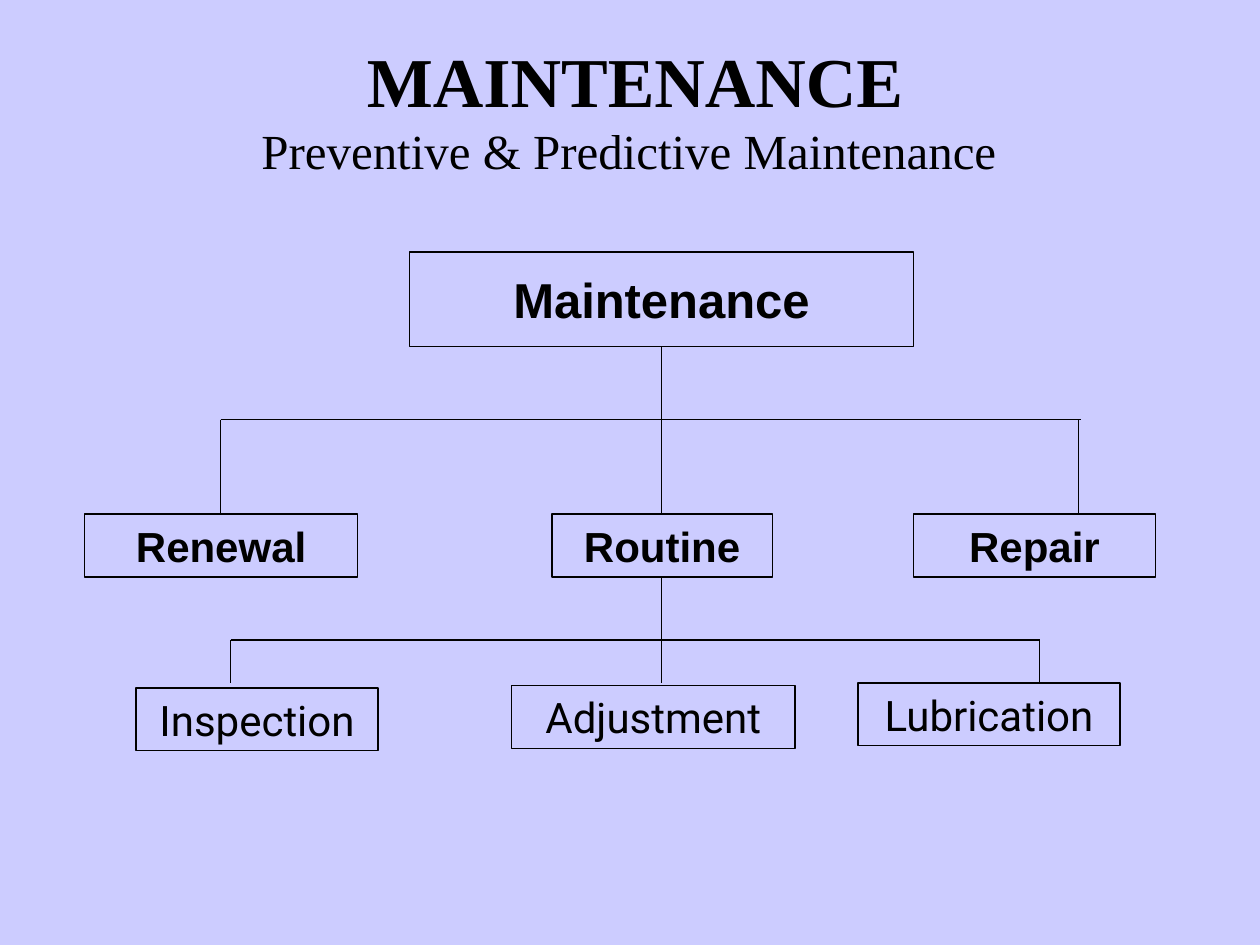
from dataclasses import dataclass

from lxml.etree import SubElement
from pptx import Presentation
from pptx.dml.color import RGBColor
from pptx.enum.shapes import MSO_CONNECTOR as CONN, MSO_SHAPE as SHAPE
from pptx.enum.text import MSO_ANCHOR as ANCHOR, MSO_AUTO_SIZE as AUTO, PP_ALIGN as ALIGN
from pptx.oxml.ns import qn
from pptx.util import Inches, Pt

INK = "000000"
HEAD = {"name": "Arial", "size": Pt(28), "bold": True}
BRANCH = {"name": "Arial", "size": Pt(24), "bold": True}
LEAF = {"name": "Roboto", "size": Pt(24), "bold": False}
TITLE = {"name": "Times New Roman", "size": Pt(40), "bold": True}
SUBTITLE = {"name": "Times New Roman", "size": Pt(28), "bold": False}


@dataclass
class Node:
    text: str
    left: float
    top: float
    width: float
    height: float
    font: dict


@dataclass
class Tree:
    stem_top: float
    bar_y: float
    bar_left: float
    bar_right: float
    drops: tuple
    drop_end: float


NODES = [
    Node("Maintenance", 3.25, 2, 4, 0.75, HEAD),
    Node("Renewal", 0.67, 4.08, 2.17, 0.5, BRANCH),
    Node("Routine", 4.38, 4.08, 1.75, 0.5, BRANCH),
    Node("Repair", 7.25, 4.08, 1.92, 0.5, BRANCH),
    Node("Inspection", 1.08, 5.46, 1.92, 0.5, LEAF),
    Node("Adjustment", 4.06, 5.44, 2.25, 0.5, LEAF),
    Node("Lubrication", 6.81, 5.42, 2.08, 0.5, LEAF),
]
STEM_X = 5.25
TREES = [
    Tree(2.75, 3.33, 1.75, 8.58, (1.75, STEM_X, 8.56), 4.08),
    Tree(4.58, 5.08, 1.83, 8.25, (1.83, STEM_X, 8.25), 5.42),
]


def rgb(color: str) -> RGBColor:
    return RGBColor.from_string(color)


def add_run(p, text: str, font: dict) -> None:
    p.alignment = ALIGN.CENTER
    r = p.add_run()
    r.text = text
    for name, value in font.items():
        setattr(r.font, name, value)
    r.font.color.rgb = rgb(INK)


def add_heading(slide) -> None:
    sp = slide.shapes.add_textbox(Inches(0.33), Inches(0.25), Inches(9.42), Inches(2.17))
    tf = sp.text_frame
    tf.word_wrap = True
    tf.auto_size = AUTO.SHAPE_TO_FIT_TEXT
    first, second = tf.paragraphs[0], tf.add_paragraph()
    add_run(first, "MAINTENANCE", TITLE)
    add_run(second, "Preventive & Predictive Maintenance ", SUBTITLE)
    second.line_spacing = 0.5
    for p in (first, second):
        pPr = p._p.get_or_add_pPr()
        pPr.set("marL", str(Inches(0.5)))
        pPr.set("indent", str(Inches(-0.5)))
        SubElement(pPr.get_or_add_spcBef(), qn("a:spcPct"), val="50000")


def add_node(slide, node: Node) -> None:
    box = map(Inches, (node.left, node.top, node.width, node.height))
    sp = slide.shapes.add_shape(SHAPE.RECTANGLE, *box)
    sp.shadow.inherit = False
    sp.fill.background()
    sp.line.color.rgb = rgb(INK)
    sp.line.width = Pt(0.75)
    tf = sp.text_frame
    tf.word_wrap = False
    tf.vertical_anchor = ANCHOR.MIDDLE
    add_run(tf.paragraphs[0], node.text, node.font)


def add_line(slide, x1: float, y1: float, x2: float, y2: float) -> None:
    line = slide.shapes.add_connector(CONN.STRAIGHT, *map(Inches, (x1, y1, x2, y2)))
    line.line.color.rgb = rgb(INK)
    line.line.width = Pt(0.75)
    SubElement(line._element.spPr, qn("a:effectLst"))


def add_tree(slide, tree: Tree) -> None:
    add_line(slide, STEM_X, tree.stem_top, STEM_X, tree.bar_y)
    add_line(slide, tree.bar_left, tree.bar_y, tree.bar_right, tree.bar_y)
    for x in tree.drops:
        add_line(slide, x, tree.bar_y, x, tree.drop_end)


def main() -> None:
    """Build the maintenance hierarchy slide."""
    prs = Presentation()
    prs.slide_width, prs.slide_height = Inches(10), Inches(7.5)
    slide = prs.slides.add_slide(prs.slide_layouts[6])
    fill = slide.background.fill
    fill.solid()
    fill.fore_color.rgb = rgb("CCCCFF")
    add_heading(slide)
    for node in NODES:
        add_node(slide, node)
    for tree in TREES:
        add_tree(slide, tree)
    prs.save("out.pptx")


if __name__ == "__main__":
    main()
